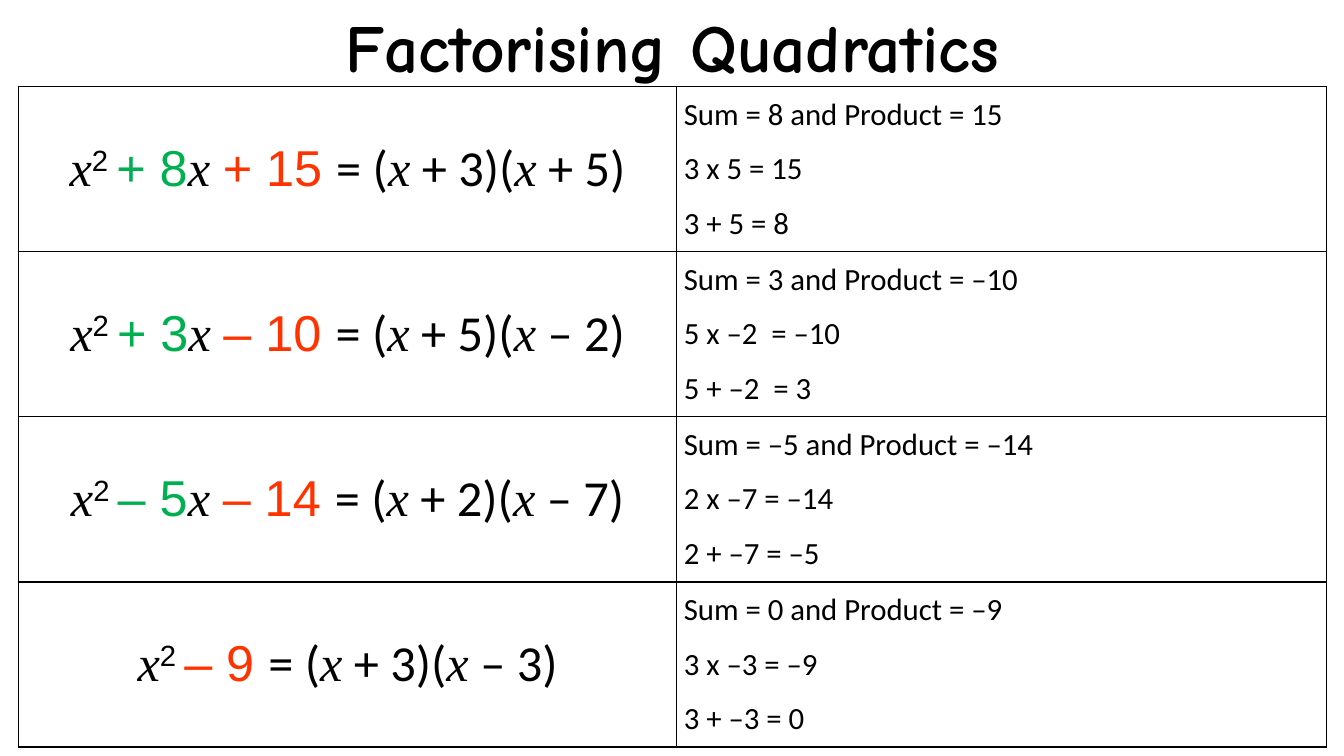
from pptx import Presentation
from pptx.dml.color import RGBColor
from pptx.enum.text import MSO_ANCHOR as Anchor, MSO_AUTO_SIZE as AutoSize, PP_ALIGN as Align
from pptx.oxml import parse_xml
from pptx.oxml.ns import nsdecls
from pptx.util import Pt


def colour(value):
    return RGBColor.from_string(value)


def add_span(para, text, **formats):
    span = para.add_run()
    span.text = text
    span.font.color.rgb = colour(formats.pop("fill", "000000"))
    for name, value in formats.items():
        setattr(span.font, name, value)
    return span


deck = Presentation()
deck.slide_width, deck.slide_height = Pt(960), Pt(540)
page = deck.slides.add_slide(deck.slide_layouts[5])

# Styles of the parts of each equation
styles = {
    "variable": dict(name="Times New Roman", italic=True),
    "power": dict(name="Arial"),
    "sum": dict(name="Arial", fill="00B050"),
    "product": dict(name="Arial", fill="FF3300"),
    "factors": dict(name="Calibri"),
}

# Sum term, product term, first and second factor, working
equations = [
    ("+ 8", "+ 15", "+ 3", "+ 5",
     ["Sum = 8 and Product = 15", "3 x 5 = 15", "3 + 5 = 8"]),
    ("+ 3", "– 10", "+ 5", "– 2",
     ["Sum = 3 and Product = –10", "5 x –2  = –10", "5 + –2  = 3"]),
    ("– 5", "– 14", "+ 2", "– 7",
     ["Sum = –5 and Product = –14", "2 x –7 = –14", "2 + –7 = –5"]),
    ("", "– 9", "+ 3", "– 3",
     ["Sum = 0 and Product = –9", "3 x –3 = –9", "3 + –3 = 0"]),
]

# Table frame
frame = page.shapes.add_table(len(equations), 2, Pt(13), Pt(62), Pt(934.5), Pt(471.6))
table = frame.table
table.first_row = table.horz_banding = False
for column, width in zip(table.columns, (470, 464.5)):
    column.width = Pt(width)
for row in table.rows:
    row.height = Pt(117.9)

# Cell margins, fill and borders
cell_format = dict(vertical_anchor=Anchor.MIDDLE, margin_left=Pt(5.5),
                   margin_right=Pt(5), margin_top=Pt(0), margin_bottom=Pt(0))
for cell in table.iter_cells():
    for name, value in cell_format.items():
        setattr(cell, name, value)
    properties = cell._tc.get_or_add_tcPr()
    for side in ("lnL", "lnR", "lnT", "lnB"):
        properties.append(parse_xml(
            f'<a:{side} {nsdecls("a")} w="{Pt(1)}"><a:solidFill>'
            f'<a:srgbClr val="000000"/></a:solidFill></a:{side}>'))
    cell.fill.background()

# Equations on the left, working on the right
for index, (total, product, first, second, working) in enumerate(equations):
    para = table.cell(index, 0).text_frame.paragraphs[0]
    para.alignment = Align.CENTER
    parts = [("x", "variable"), ("2 ", "power")]
    if total:
        parts += [(total, "sum"), ("x ", "variable")]
    parts += [(product + " ", "product"), ("= (", "factors"), ("x", "variable"),
              (f" {first})(", "factors"), ("x", "variable"), (f" {second})", "factors")]
    for text, style in parts:
        span = add_span(para, text, size=Pt(36), **styles[style])
        if style == "power":
            span._r.get_or_add_rPr().set("baseline", "30000")

    body = table.cell(index, 1).text_frame
    for number, line in enumerate(working):
        para = body.add_paragraph() if number else body.paragraphs[0]
        if number:
            para.space_before = Pt(12)
        add_span(para, line, size=Pt(22), name="Calibri")

# Title
title = page.shapes.title
for name, value in dict(left=0, top=0, width=960, height=65.5).items():
    setattr(title, name, Pt(value))
title_format = dict(word_wrap=True, auto_size=AutoSize.SHAPE_TO_FIT_TEXT,
                    vertical_anchor=Anchor.TOP)
for name, value in title_format.items():
    setattr(title.text_frame, name, value)
para = title.text_frame.paragraphs[0]
para.alignment = Align.CENTER
add_span(para, "Factorising Quadratics", size=Pt(48), name="Comic Neue", bold=True)

deck.save("out.pptx")
